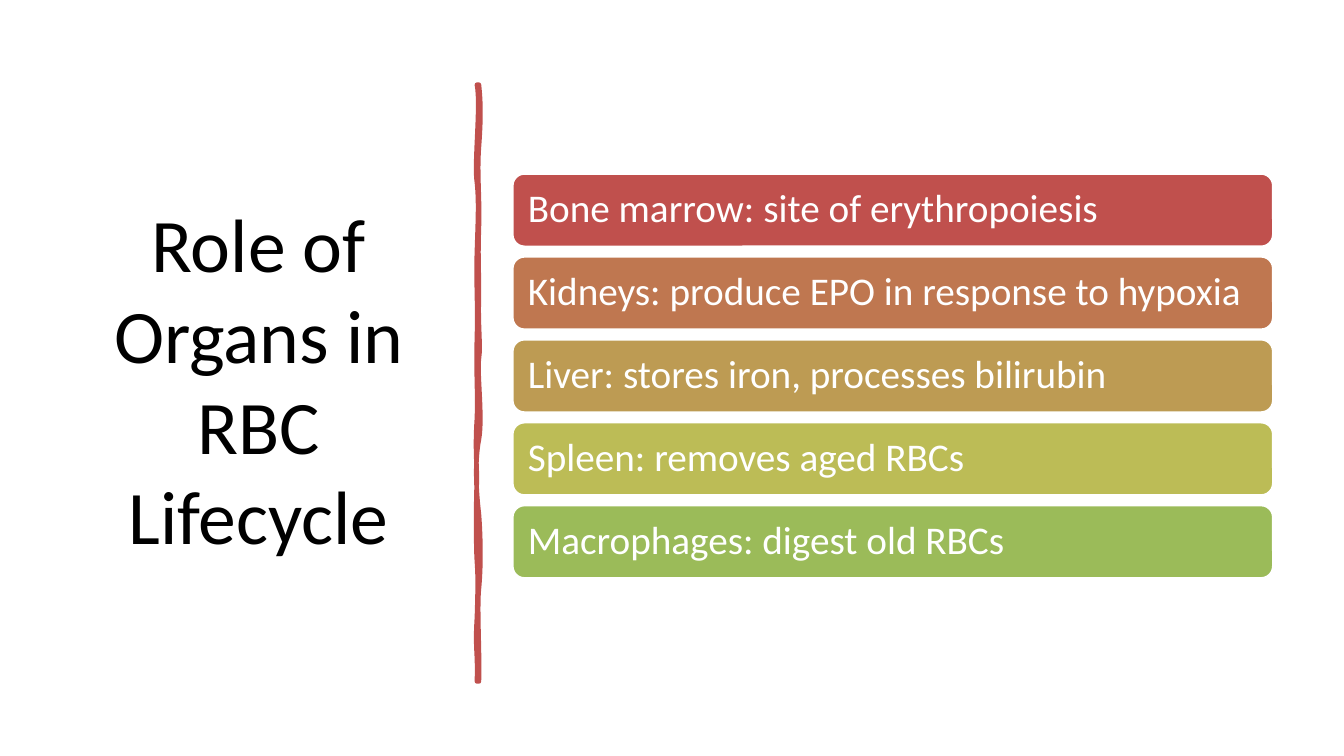
import pptx
import pptx.util
import pptx.dml.color
import pptx.enum.shapes
import pptx.enum.text
import pptx.oxml.ns
import lxml.etree

Inches, Pt = pptx.util.Inches, pptx.util.Pt

# Content
TITLE = "Role of Organs in RBC Lifecycle"
ORGANS = [
    ("Bone marrow: site of erythropoiesis", "red"),
    ("Kidneys: produce EPO in response to hypoxia", "rust"),
    ("Liver: stores iron, processes bilirubin", "ochre"),
    ("Spleen: removes aged RBCs", "olive"),
    ("Macrophages: digest old RBCs", "green"),
]
COLOURS = {
    "red": "C0504D", "rust": "BF7750", "ochre": "BD9B53", "olive": "BCBC56",
    "green": "9BBB59", "black": "000000", "white": "FFFFFF",
}
FONT = "Calibri"

# Hand-drawn divider: each curve is two control points and an end point
DIVIDER_START = (4.75, 0.84)
DIVIDER_CURVES = [
    ((4.77, 1.02), (4.77, 1.19), (4.75, 1.46)),
    ((4.73, 1.73), (4.76, 1.95), (4.75, 2.26)),
    ((4.74, 2.57), (4.75, 2.62), (4.75, 2.94)),
    ((4.74, 3.25), (4.77, 3.42), (4.75, 3.56)),
    ((4.73, 3.70), (4.79, 4.14), (4.75, 4.36)),
    ((4.71, 4.57), (4.72, 4.84), (4.75, 5.10)),
    ((4.77, 5.36), (4.77, 5.64), (4.75, 5.84)),
    ((4.73, 6.03), (4.76, 6.50), (4.75, 6.76)),
    ((4.74, 6.76), (4.73, 6.76), (4.73, 6.76)),
    ((4.74, 6.46), (4.71, 6.44), (4.73, 6.13)),
    ((4.74, 5.83), (4.74, 5.70), (4.73, 5.57)),
    ((4.72, 5.44), (4.72, 4.95), (4.73, 4.77)),
    ((4.73, 4.59), (4.71, 4.45), (4.73, 4.15)),
    ((4.74, 3.86), (4.72, 3.73), (4.73, 3.35)),
    ((4.74, 2.98), (4.72, 2.81), (4.73, 2.50)),
    ((4.74, 2.18), (4.75, 2.00), (4.73, 1.81)),
    ((4.70, 1.63), (4.77, 1.04), (4.73, 0.84)),
    ((4.74, 0.84), (4.74, 0.84), (4.75, 0.84)),
]

# Layout in inches
BAR_LEFT, BAR_WIDTH, BAR_HEIGHT = 5.08, 7.55, 0.73
FIRST_BAR_TOP, LAST_BAR_TOP = 1.72, 5.01
BAR_PITCH = (LAST_BAR_TOP - FIRST_BAR_TOP) / (len(ORGANS) - 1)
BAR_INSET = 0.12


def rgb(name):
    return pptx.dml.color.RGBColor.from_string(COLOURS[name])


def paint(shape, fill, line, width):
    shape.shadow.inherit = False
    shape.fill.solid()
    shape.fill.fore_color.rgb = rgb(fill)
    shape.line.color.rgb = rgb(line)
    shape.line.width = Pt(width)


def write(shape, text, size, colour, alignment, spacing, inset):
    frame = shape.text_frame
    frame.word_wrap = True
    frame.vertical_anchor = pptx.enum.text.MSO_ANCHOR.MIDDLE
    frame.margin_left = frame.margin_right = Inches(inset)
    para = frame.paragraphs[0]
    para.alignment = alignment
    para.line_spacing = spacing
    span = para.add_run()
    span.text = text
    span.font.name = FONT
    span.font.size = Pt(size)
    span.font.color.rgb = rgb(colour)


def bend(shape):
    """Turn every three straight segments of a freeform into one cubic curve."""
    qn = pptx.oxml.ns.qn
    segments = list(shape.element.iter(qn("a:lnTo")))
    for first in range(0, len(segments), 3):
        curve = lxml.etree.Element(qn("a:cubicBezTo"))
        segments[first].addprevious(curve)
        for segment in segments[first:first + 3]:
            curve.append(segment[0])
            segment.getparent().remove(segment)


deck = pptx.Presentation()
deck.slide_width, deck.slide_height = Inches(13.33), Inches(7.5)
page = deck.slides.add_slide(deck.slide_layouts[6])
ALIGN = pptx.enum.text.PP_ALIGN

# Title
title = page.shapes.add_textbox(Inches(0.69), Inches(0.7), Inches(3.75), Inches(6.11))
write(title, TITLE, 54, "black", ALIGN.CENTER, 1.0, 0.1)

# Divider
outline = page.shapes.build_freeform(*(Inches(value) for value in DIVIDER_START))
outline.add_line_segments(
    [(Inches(x), Inches(y)) for curve in DIVIDER_CURVES for x, y in curve], close=True
)
divider = outline.convert_to_shape()
bend(divider)
paint(divider, "red", "red", 3.25)

# Organ bars
for row, (text, colour) in enumerate(ORGANS):
    bar = page.shapes.add_shape(
        pptx.enum.shapes.MSO_SHAPE.ROUNDED_RECTANGLE,
        Inches(BAR_LEFT), Inches(FIRST_BAR_TOP + row * BAR_PITCH),
        Inches(BAR_WIDTH), Inches(BAR_HEIGHT),
    )
    paint(bar, colour, "white", 2)
    write(bar, text, 28, "white", ALIGN.LEFT, 0.9, BAR_INSET)

deck.save("out.pptx")
